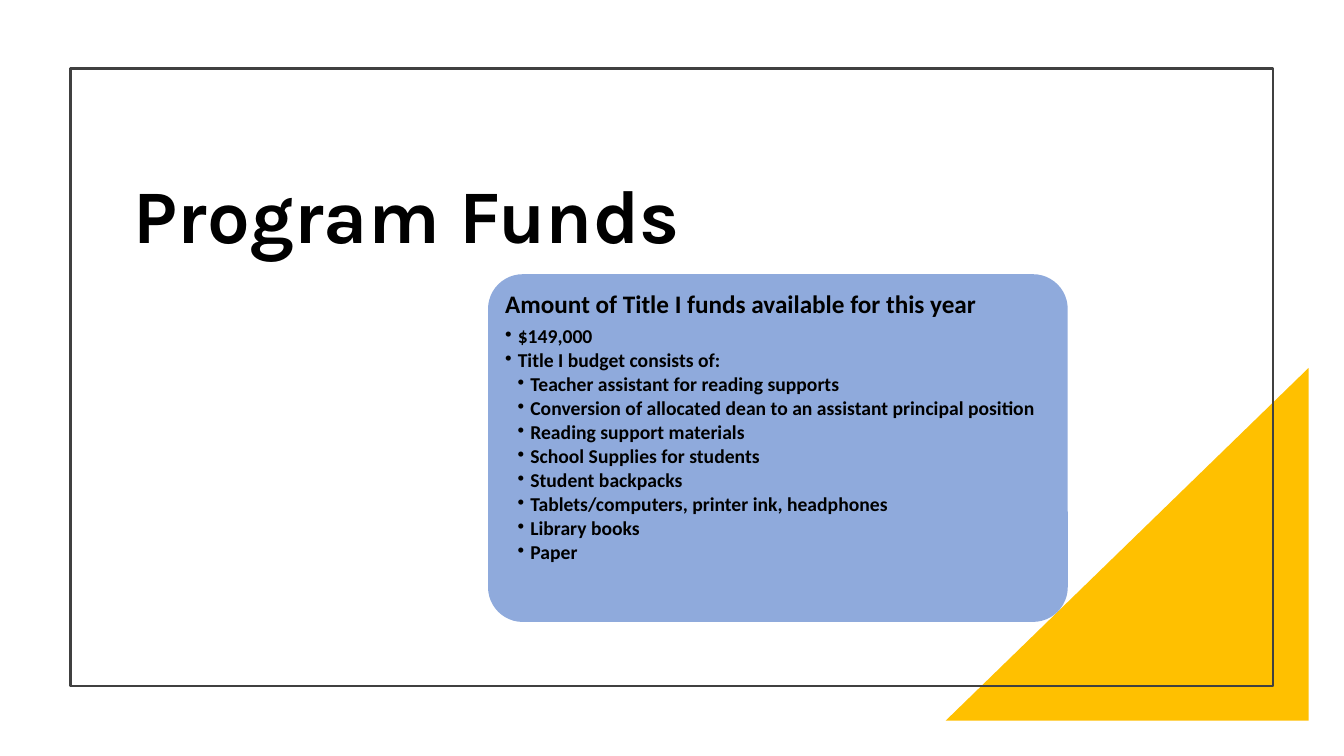
from lxml.etree import SubElement
from pptx import Presentation
from pptx.dml.color import RGBColor
from pptx.enum.shapes import MSO_SHAPE as Shape
from pptx.enum.text import MSO_ANCHOR as Anchor
from pptx.oxml.ns import qn
from pptx.util import Inches, Pt

COLORS = {"gold": "FFC000", "frame": "404040", "panel": "8FAADC", "text": "000000"}
HEADING = "Amount of Title I funds available for this year"
BULLETS = [
    (1, "$149,000"),
    (1, "Title I budget consists of:"),
    (2, "Teacher assistant for reading supports"),
    (2, "Conversion of allocated dean to an assistant principal position"),
    (2, "Reading support materials"),
    (2, "School Supplies for students"),
    (2, "Student backpacks"),
    (2, "Tablets/computers, printer ink, headphones"),
    (2, "Library books"),
    (2, "Paper"),
]


class FundsSlide:
    """Hold the colours and the current slide, and draw its elements."""

    def __init__(self, deck, colors):
        self.slide = deck.slides.add_slide(deck.slide_layouts[6])
        self.colors = colors

    def color(self, name):
        return RGBColor.from_string(self.colors[name])

    def shape(self, kind, place, fill=None, line=None):
        shape = self.slide.shapes.add_shape(kind, *map(Inches, place))
        shape.shadow.inherit = False
        if fill:
            shape.fill.solid()
            shape.fill.fore_color.rgb = self.color(fill)
        else:
            shape.fill.background()
        if line:
            shape.line.color.rgb = self.color(line)
            shape.line.width = Pt(1.5)
        else:
            shape.line.fill.background()
        return shape

    def text_box(self, place, margin, anchor=Anchor.TOP):
        frame = self.slide.shapes.add_textbox(*map(Inches, place)).text_frame
        frame.word_wrap = True
        frame.vertical_anchor = anchor
        frame.margin_left = frame.margin_right = Inches(margin)
        frame.margin_top = frame.margin_bottom = Inches(margin)
        return frame

    def paragraph(self, para, text, font, size, after=0):
        para.text = text
        para.line_spacing = 0.9
        para.space_after = Pt(after)
        for span in para.runs:
            span.font.name = font
            span.font.size = Pt(size)
            span.font.bold = True
            span.font.color.rgb = self.color("text")

    def bullet(self, frame, level, text):
        para = frame.add_paragraph()
        self.paragraph(para, text, "Calibri", 14, 2)
        para.level = level
        properties = para._p.get_or_add_pPr()
        properties.set("marL", str(Inches(0.125 * level)))
        properties.set("indent", str(Inches(-0.125)))
        SubElement(properties, qn("a:buChar")).set("char", "•")


def main():
    deck = Presentation()
    deck.slide_width, deck.slide_height = Inches(13.33), Inches(7.5)
    page = FundsSlide(deck, COLORS)

    corner = page.shape(Shape.RIGHT_TRIANGLE, (9.38, 3.65, 3.6, 3.5), fill="gold")
    corner._element.spPr.get_or_add_xfrm().set("flipH", "1")
    page.shape(Shape.RECTANGLE, (0.7, 0.68, 11.93, 6.13), line="frame")

    title = page.text_box((1.23, 1.3, 10.92, 1.75), 0.1, Anchor.MIDDLE)
    page.paragraph(title.paragraphs[0], "Program Funds", "Karla", 54)

    panel = page.shape(Shape.ROUNDED_RECTANGLE, (4.84, 2.72, 5.75, 3.45), fill="panel")
    panel.adjustments[0] = 0.1
    budget = page.text_box((4.94, 2.82, 5.55, 3.25), 0.07)
    page.paragraph(budget.paragraphs[0], HEADING, "Calibri", 18, 6)
    for level, text in BULLETS:
        page.bullet(budget, level, text)

    deck.save("out.pptx")


if __name__ == "__main__":
    main()
